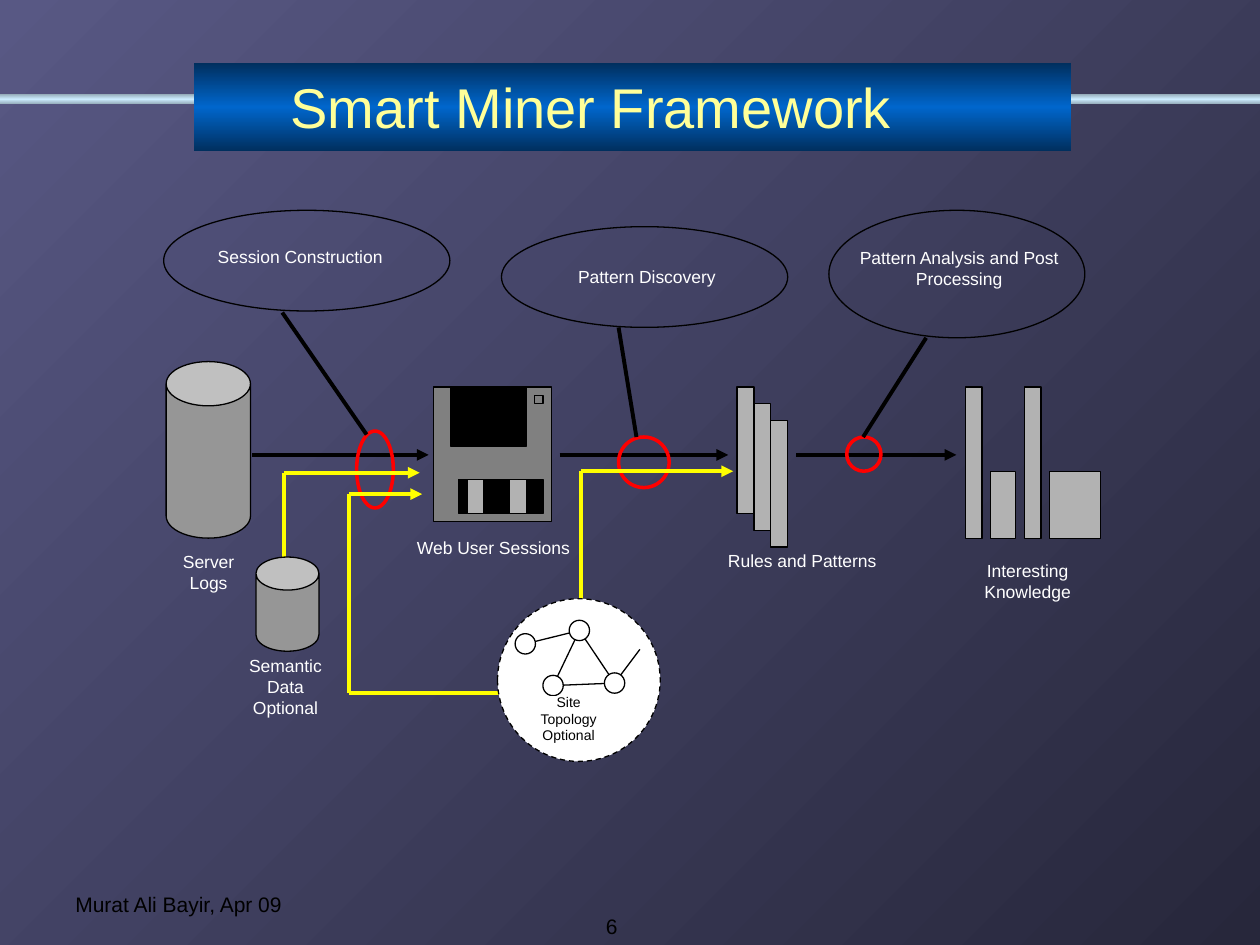
from copy import deepcopy
from itertools import pairwise

from pptx import Presentation
from pptx.dml.color import RGBColor
from pptx.enum.dml import MSO_LINE
from pptx.enum.shapes import MSO_CONNECTOR, MSO_SHAPE as Preset
from pptx.enum.text import MSO_ANCHOR as Anchor, PP_ALIGN as Align
from pptx.oxml.ns import qn
from pptx.util import Cm, Pt
from lxml.etree import SubElement

BLACK = RGBColor(0x00, 0x00, 0x00)
WHITE = RGBColor(0xFF, 0xFF, 0xFF)
YELLOW = RGBColor(0xFF, 0xFF, 0x00)
RED = RGBColor(0xFF, 0x00, 0x00)
TITLE_YELLOW = RGBColor(0xFF, 0xFF, 0x99)
BAR_EDGE, BAR_CENTRE = RGBColor(0x00, 0x2F, 0x5E), RGBColor(0x00, 0x66, 0xCC)
RAIL_EDGE, RAIL_CENTRE = RGBColor(0x94, 0xAB, 0xB9), RGBColor(0xCC, 0xEC, 0xFF)
BACK_LIGHT, BACK_DARK = RGBColor(0x58, 0x58, 0x84), RGBColor(0x27, 0x27, 0x3B)
DISK_GREY = RGBColor(0x80, 0x80, 0x80)
CAN_GREY = RGBColor(0x96, 0x96, 0x96)
BAR_GREY = RGBColor(0xB2, 0xB2, 0xB2)

UNIT = 0.34  # grid step of the icons, in cm
FLOW_Y = 9.17  # height of the main flow arrows, in cm


def add_form(slide, preset, box, fill=None, line=BLACK, weight=0.75):
    form = slide.shapes.add_shape(preset, *map(Cm, box))
    form.shadow.inherit = False
    if fill is None:
        form.fill.background()
    else:
        form.fill.solid()
        form.fill.fore_color.rgb = fill
    if line is None:
        form.line.fill.background()
    else:
        form.line.color.rgb = line
        form.line.width = Pt(weight)
    return form


def add_band(slide, box, edge, centre):
    """Rectangle shaded from edge to centre and back, top to bottom."""
    band = add_form(slide, Preset.RECTANGLE, box, line=None)
    band.fill.gradient()
    band.fill.gradient_angle = 270
    stops = band._element.spPr.find(qn("a:gradFill")).find(qn("a:gsLst"))
    stops.insert(1, deepcopy(stops[0]))
    for stop, position, color in zip(
            band.fill.gradient_stops, (0, 0.5, 1), (edge, centre, edge)):
        stop.position = position
        stop.color.rgb = color


def add_line(slide, start, end, color=BLACK, weight=2.25, arrow=False):
    line = slide.shapes.add_connector(
        MSO_CONNECTOR.STRAIGHT, *map(Cm, (*start, *end)))
    line.line.color.rgb = color
    line.line.width = Pt(weight)
    properties = line._element.spPr
    if arrow:
        SubElement(properties.find(qn("a:ln")), qn("a:tailEnd"), type="triangle")
    SubElement(properties, qn("a:effectLst"))


def add_label(slide, text, box, size=10, color=WHITE, align=Align.CENTER,
              anchor=Anchor.TOP, insets=(0.15, 0.08), wrap=True):
    frame = slide.shapes.add_textbox(*map(Cm, box)).text_frame
    frame.word_wrap = wrap
    frame.vertical_anchor = anchor
    frame.margin_left = frame.margin_right = Cm(insets[0])
    frame.margin_top = frame.margin_bottom = Cm(insets[1])
    frame.text = text
    for paragraph in frame.paragraphs:
        paragraph.alignment = align
        for run in paragraph.runs:
            run.font.name = "Arial"
            run.font.size = Pt(size)
            run.font.color.rgb = color


def title_band(slide, left, top):
    add_band(slide, (0, top + 0.63, 25.4, 0.2), RAIL_EDGE, RAIL_CENTRE)
    add_band(slide, (left, top, 17.68, 1.78), BAR_EDGE, BAR_CENTRE)
    add_label(slide, "Smart Miner Framework", (left - 3.14, top - 0.43, 22.3, 2.11),
              size=32, color=TITLE_YELLOW, anchor=Anchor.BOTTOM, insets=(0.25, 0.13))


def footer(slide, left, top):
    for text, box, align in (
            ("Murat Ali Bayir, Apr 09", (left, top, 6.55, 1.27), Align.LEFT),
            ("6", (left + 8.89, top + 0.43, 2.54, 1.27), Align.RIGHT)):
        add_label(slide, text, box, 12, BLACK, align, Anchor.BOTTOM, (0.25, 0.13))


def icon(slide, left, top, parts):
    """Draw (x, y, width, height, fill) rectangles given in grid units."""
    for x, y, width, height, fill in parts:
        box = (left + x * UNIT, top + y * UNIT, width * UNIT, height * UNIT)
        add_form(slide, Preset.RECTANGLE, box, fill)


def floppy_disk(slide, left, top):
    icon(slide, left, top, [
        (0, 0, 7, 8, DISK_GREY),
        (1, 0, 4.5, 3.5, BLACK),
        (1.5, 5.5, 5, 2, BLACK),
        (2, 5.5, 1, 2, BAR_GREY),
        (4.5, 5.5, 1, 2, BAR_GREY),
        (6, 0.5, 0.5, 0.5, DISK_GREY),
    ])


def rule_stack(slide, left, top):
    icon(slide, left, top, [(i, i, 1, 7.5, BAR_GREY) for i in range(3)])


def knowledge_bars(slide, left, top):
    icon(slide, left, top, [
        (x, 9 - height, width, height, BAR_GREY)
        for x, width, height in ((0, 1, 9), (1.5, 1.5, 4), (3.5, 1, 9), (5, 3, 4))
    ])


def database(slide, box):
    add_form(slide, Preset.CAN, box, CAN_GREY).adjustments[0] = 0.525


def callout(slide, bubble, text, label, pointer, ring, **style):
    """Step name in a bubble, tied to the ring round its arrow."""
    add_form(slide, Preset.OVAL, ring, line=RED, weight=2)
    add_form(slide, Preset.OVAL, bubble)
    add_label(slide, text, label, **style)
    add_line(slide, *pointer)


def route(slide, *points):
    """Yellow angled path with an arrowhead at its end."""
    for start, end in pairwise(points):
        add_line(slide, start, end, YELLOW, arrow=end == points[-1])


def site_topology(slide, left, top):
    circle = add_form(slide, Preset.OVAL, (left, top, 3.28, 3.28), WHITE)
    circle.line.dash_style = MSO_LINE.DASH
    pages = [(left + x, top + y) for x, y in
             ((1.65, 0.64), (0.56, 0.91), (1.12, 1.75), (2.36, 1.70))]
    loose_end = (left + 2.87, top + 1.02)
    root, _, lower_left, lower_right = pages
    for page in pages[1:]:
        add_line(slide, root, page, weight=0.75)
    add_line(slide, lower_left, lower_right, weight=0.75)
    add_line(slide, lower_right, loose_end, weight=0.75)
    size = 0.41
    for x, y in pages:
        add_form(slide, Preset.OVAL, (x - size / 2, y - size / 2, size, size), WHITE)
    add_form(slide, Preset.RECTANGLE, (left + 0.69, top + 1.98, 2.03, 0.81), WHITE, WHITE)
    add_label(slide, "Site\nTopology\nOptional",
              (left - 0.43, top + 1.83, 3.73, 1.63), 8, BLACK)


def framework(slide):
    # Stages
    floppy_disk(slide, 8.74, 7.8)
    rule_stack(slide, 14.86, 7.8)
    knowledge_bars(slide, 19.46, 7.8)
    database(slide, (3.35, 7.29, 1.7, 3.56))

    # Main flow
    for start, end in ((5.08, 8.64), (11.28, 14.68), (16.05, 19.28)):
        add_line(slide, (start, FLOW_Y), (end, FLOW_Y), arrow=True)

    # Processing steps
    callout(slide, (3.3, 4.24, 5.77, 2.03), "Session Construction",
            (4.24, 4.88, 4.72, 0.76), ((5.69, 6.3), (7.39, 8.76)),
            (7.19, 8.69, 0.74, 1.55), align=Align.LEFT)
    callout(slide, (10.11, 4.57, 5.77, 2.03), "Pattern Discovery",
            (11.48, 5.28, 3.12, 0.58), ((12.47, 6.6), (12.83, 8.81)),
            (12.47, 8.81, 1.02, 1.02), wrap=False)
    callout(slide, (16.71, 4.24, 5.16, 2.57), "Pattern Analysis and Post Processing",
            (17.15, 4.9, 4.37, 1.02), ((18.67, 6.81), (17.4, 8.81)),
            (17.07, 8.81, 0.69, 0.69))

    # Optional inputs
    route(slide, (5.72, 11.35), (5.72, 9.53), (8.46, 9.53))
    route(slide, (10.21, 13.97), (7.04, 13.97), (7.04, 9.96), (8.51, 9.96))
    route(slide, (11.71, 13.13), (11.71, 9.5), (14.78, 9.5))
    database(slide, (5.16, 11.23, 1.27, 1.9))
    site_topology(slide, 10.03, 12.07)

    # Stage names
    for text, box in (
            ("Server\nLogs", (2.34, 11.02, 3.73, 1.3)),
            ("Web User Sessions", (7.9, 10.74, 4.09, 1.3)),
            ("Rules and Patterns", (13.54, 11, 5.26, 0.76)),
            ("Interesting Knowledge", (18.85, 11.2, 3.73, 1.3)),
            ("Semantic\nData\nOptional", (3.89, 13.13, 3.73, 1.45))):
        add_label(slide, text, box)


def main():
    deck = Presentation()
    deck.slide_width, deck.slide_height = Cm(25.4), Cm(19.05)
    slide = deck.slides.add_slide(deck.slide_layouts[6])
    backdrop = slide.background.fill
    backdrop.gradient()
    backdrop.gradient_angle = 315
    for stop, color in zip(backdrop.gradient_stops, (BACK_LIGHT, BACK_DARK)):
        stop.color.rgb = color
    footer(slide, 1.27, 17.35)
    title_band(slide, 3.91, 1.27)
    framework(slide)
    deck.save("out.pptx")


if __name__ == "__main__":
    main()
